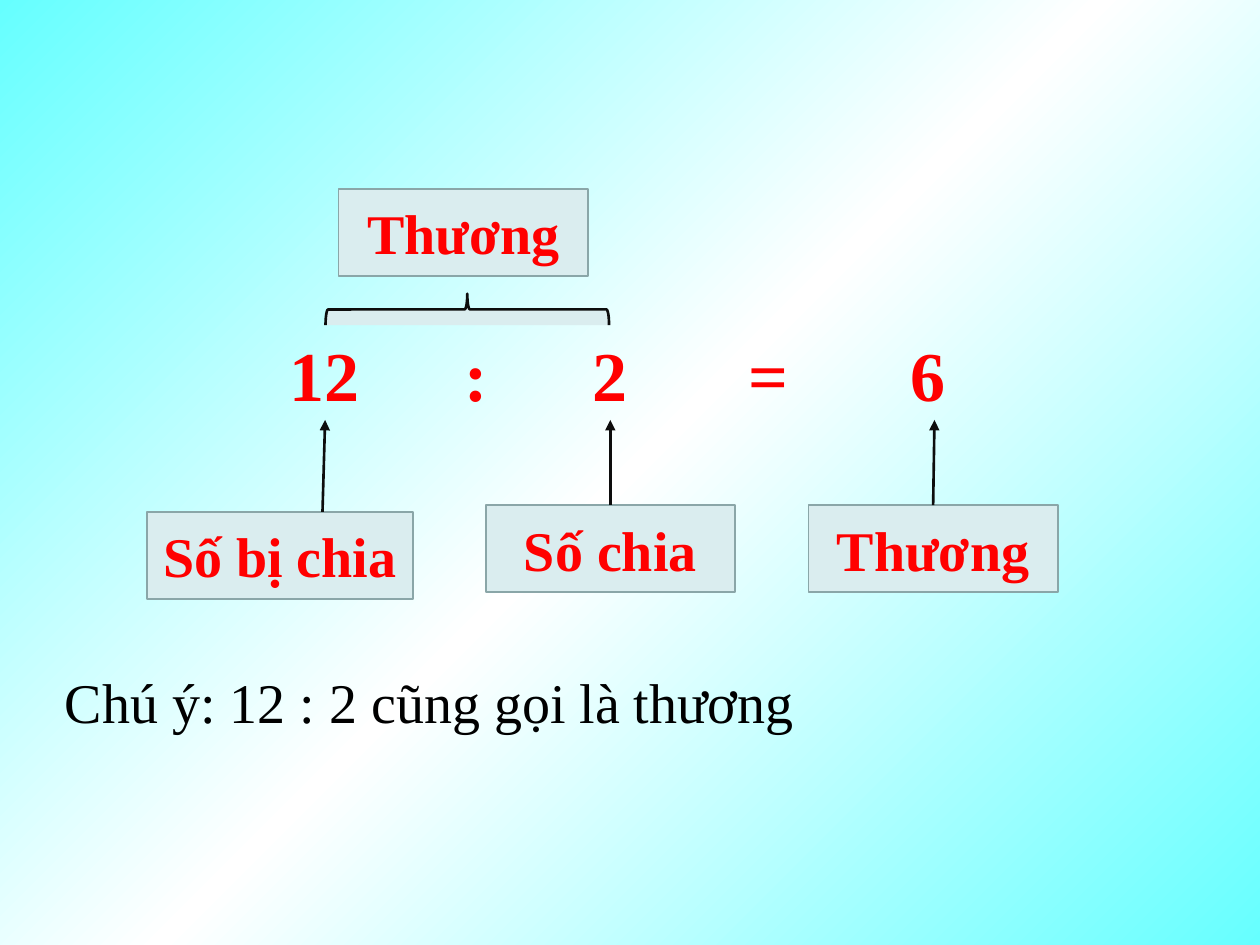
from copy import deepcopy

from lxml.etree import SubElement
from pptx import Presentation
from pptx.dml.color import RGBColor
from pptx.enum.shapes import MSO_CONNECTOR as Link, MSO_SHAPE as Shape
from pptx.enum.text import MSO_ANCHOR as Anchor, PP_ALIGN as Align
from pptx.oxml.ns import qn
from pptx.util import Pt

FONT = "Times New Roman"
CYAN = RGBColor(0x66, 0xFF, 0xFF)
WHITE = RGBColor(0xFF, 0xFF, 0xFF)
PALE = RGBColor(0xDA, 0xED, 0xEF)
EDGE = RGBColor(0x8A, 0xA6, 0xA8)
INK = RGBColor(0x0D, 0x0D, 0x0D)
RED = RGBColor(0xFF, 0x00, 0x00)
BLACK = RGBColor(0x00, 0x00, 0x00)

BOX_H = 49.7
ARROW_TOP = 240


def paint(slide):
    """Fill the background with a diagonal cyan-white-cyan gradient."""
    fill = slide.background.fill
    fill.gradient()
    fill.gradient_angle = 315
    stops = slide.element.find(".//" + qn("a:gsLst"))
    stops.insert(1, deepcopy(stops[0]))
    for stop, place, color in zip(fill.gradient_stops, (0, 0.5, 1), (CYAN, WHITE, CYAN)):
        stop.position = place
        stop.color.rgb = color


def write(par, text, size, color, bold=False):
    run = par.add_run()
    run.text = text
    font = run.font
    font.name, font.size, font.bold = FONT, Pt(size), bold
    font.color.rgb = color


def add_form(slide, kind, left, top, width, height, edge, weight):
    form = slide.shapes.add_shape(kind, Pt(left), Pt(top), Pt(width), Pt(height))
    form.shadow.inherit = False
    form.fill.solid()
    form.fill.fore_color.rgb = PALE
    form.line.color.rgb = edge
    form.line.width = Pt(weight)
    return form


def add_label(slide, text, left, top, width=142.5):
    box = add_form(slide, Shape.RECTANGLE, left, top, width, BOX_H, EDGE, 1)
    frame = box.text_frame
    frame.vertical_anchor = Anchor.MIDDLE
    frame.word_wrap = True
    par = frame.paragraphs[0]
    par.alignment = Align.CENTER
    write(par, text, 32, RED, True)
    return box


def add_arrow(slide, start, end, box=None):
    """Draw an arrow up to end, joined to the top of box if one is given."""
    line = slide.shapes.add_connector(Link.STRAIGHT, *map(Pt, start + end))
    if box is not None:
        line.begin_connect(box, 0)
    line.line.color.rgb = INK
    line.line.width = Pt(1.5)
    stroke = line.line._get_or_add_ln()
    SubElement(stroke, qn("a:tailEnd"), type="triangle")
    SubElement(line._element.spPr, qn("a:effectLst"))


def add_text(slide, left, top, width, height, wrap):
    box = slide.shapes.add_textbox(Pt(left), Pt(top), Pt(width), Pt(height))
    box.text_frame.word_wrap = wrap
    return box.text_frame.paragraphs[0]


def add_sum(slide, parts):
    """Write the equation, each part centred on its own tab stop."""
    par = add_text(slide, 156, 185.8, 405, 55.4, True)
    tabs = SubElement(par._p.get_or_add_pPr(), qn("a:tabLst"))
    for text, place in parts:
        SubElement(tabs, qn("a:tab"), pos=str(Pt(place)), algn="ctr")
        write(par, "\t" + text, 40, RED, True)


def main():
    deck = Presentation()
    deck.slide_width, deck.slide_height = Pt(720), Pt(540)
    slide = deck.slides.add_slide(deck.slide_layouts[6])
    paint(slide)

    add_label(slide, "Số bị chia", 84, 292.5, 152)
    divisor = add_label(slide, "Số chia", 277.5, 288.7)
    result = add_label(slide, "Thương", 462, 288.7)
    add_arrow(slide, (184.3, 292.5), (185.8, ARROW_TOP))
    add_arrow(slide, (348.75, 288.7), (348.75, ARROW_TOP), divisor)
    add_arrow(slide, (533.25, 288.7), (534, ARROW_TOP), result)

    brace = add_form(slide, Shape.LEFT_BRACE, 258, 95.8, 18, 162, INK, 1.5)
    brace.rotation = 90
    add_label(slide, "Thương", 193.5, 108)
    add_sum(slide, [("12", 22.5), (":", 108.8), ("2", 185.4), ("=", 276.2), ("6", 367)])
    note = add_text(slide, 30, 378, 435, 46, False)
    write(note, "Chú ý: 12 : 2 cũng gọi là thương", 32, BLACK)

    deck.save("out.pptx")


if __name__ == "__main__":
    main()
